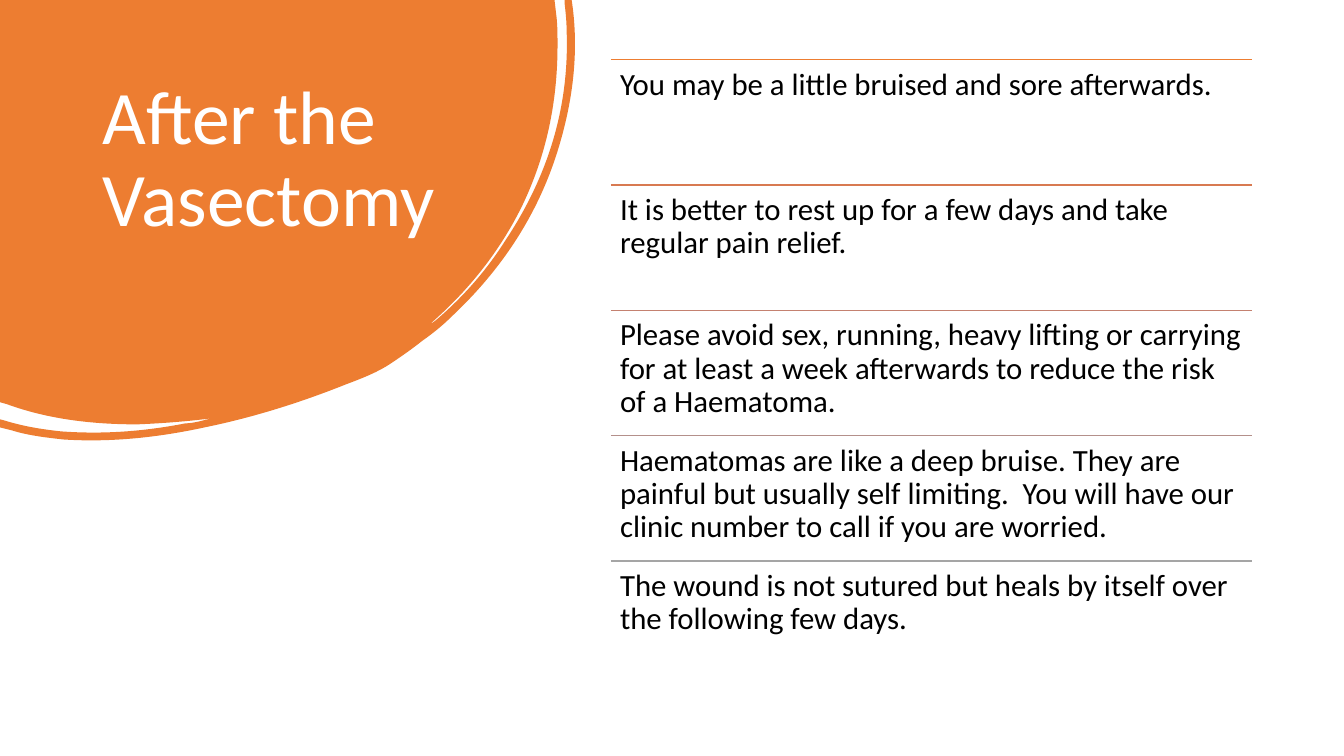
from pptx import Presentation, util as u
from pptx.dml.color import RGBColor
from pptx.enum import shapes, text
from pptx.oxml.ns import qn
from lxml import etree

BLOB = [
    (0, 0), (5.5, 0), (5.52, 0.17),
    (5.53, 0.26, 5.53, 0.36, 5.53, 0.45),
    (5.53, 1.01, 5.42, 1.54, 5.18, 2.04),
    (4.96, 2.49, 4.65, 2.88, 4.27, 3.21),
    (4.29, 3.21, 4.3, 3.19, 4.32, 3.18),
    (4.59, 2.95, 4.82, 2.69, 5.01, 2.39),
    (5.43, 1.76, 5.65, 1.07, 5.62, 0.3),
    (5.62, 0.21, 5.61, 0.12, 5.6, 0.03),
    (5.6, 0), (5.67, 0), (5.68, 0.07),
    (5.74, 0.54, 5.68, 1.02, 5.53, 1.5),
    (5.33, 2.14, 4.97, 2.68, 4.48, 3.14),
    (4.39, 3.23, 4.29, 3.31, 4.19, 3.38),
    (4.09, 3.46, 3.99, 3.53, 3.87, 3.61),
    (3.75, 3.69, 3.6, 3.75, 3.44, 3.81),
    (2.99, 3.99, 2.52, 4.14, 2.03, 4.24),
    (1.57, 4.34, 1.1, 4.39, 0.63, 4.36),
    (0.45, 4.34, 0.28, 4.32, 0.12, 4.27),
    (0, 4.24), (0, 4.16), (0.04, 4.17),
    (0.23, 4.23, 0.42, 4.26, 0.61, 4.28),
    (1.03, 4.31, 1.43, 4.28, 1.84, 4.2),
    (1.89, 4.2, 1.93, 4.19, 1.98, 4.18),
    (2.02, 4.17, 2.06, 4.16, 2.1, 4.15),
    (1.86, 4.18, 1.61, 4.2, 1.36, 4.21),
    (0.92, 4.21, 0.48, 4.16, 0.07, 4.01),
    (0, 3.99),
]
NOTES = [
    ("You may be a little bruised and sore afterwards.", "ED7D31"),
    ("It is better to rest up for a few days and take regular pain relief.", "D87A51"),
    ("Please avoid sex, running, heavy lifting or carrying for at least a week "
     "afterwards to reduce the risk of a Haematoma.", "C48170"),
    ("Haematomas are like a deep bruise. They are painful but usually self limiting.  "
     "You will have our clinic number to call if you are worried.", "B4908B"),
    ("The wound is not sutured but heals by itself over the following few days.", "A5A5A5"),
]


def paint(color, tone):
    """Give a colour format the hex colour."""
    color.rgb = RGBColor.from_string(tone)


def write(frame, words, size, tone):
    """Fill a text frame with one left-aligned paragraph."""
    frame.text = words
    frame.word_wrap = True
    frame.auto_size = text.MSO_AUTO_SIZE.NONE
    frame.vertical_anchor = text.MSO_ANCHOR.TOP
    para = frame.paragraphs[0]
    para.alignment = text.PP_ALIGN.LEFT
    para.line_spacing = 0.9
    font = para.runs[0].font
    font.name, font.size = "Calibri", u.Pt(size)
    paint(font.color, tone)


def bend(shape, parts):
    """Join the three segments of each curved part into one Bezier."""
    lines = iter(list(shape._element.iter(qn("a:lnTo"))))
    for part in parts:
        first = next(lines)
        if len(part) == 2:
            continue
        curve = etree.Element(qn("a:cubicBezTo"))
        first.addprevious(curve)
        for line in (first, next(lines), next(lines)):
            curve.append(line[0])
            line.getparent().remove(line)


def draw_blob(slide, left, top):
    """Draw the orange blob behind everything else."""
    points = [(u.Inches(left + x), u.Inches(top + y))
              for part in BLOB for x, y in zip(part[::2], part[1::2])]
    pen = slide.shapes.build_freeform(*points[0])
    pen.add_line_segments(points[1:], close=True)
    blob = pen.convert_to_shape()
    bend(blob, BLOB[1:])
    blob.shadow.inherit = False
    blob.fill.solid()
    paint(blob.fill.fore_color, "ED7D31")
    blob.line.fill.background()
    slide.shapes.title._element.addprevious(blob._element)


def set_title(slide, left, top, width, height):
    """Place the title in its box."""
    title = slide.shapes.title
    title.left, title.top = u.Inches(left), u.Inches(top)
    title.width, title.height = u.Inches(width), u.Inches(height)
    write(title.text_frame, "After the Vasectomy", 54, "FFFFFF")


def list_notes(slide, left, top, width, height):
    """Stack the ruled notes evenly in the box."""
    group = slide.shapes.add_group_shape().shapes
    row = height / len(NOTES)
    x, wide = u.Inches(left), u.Inches(width)
    for i, (words, tone) in enumerate(NOTES):
        y = u.Inches(top + i * row)
        rule = group.add_connector(shapes.MSO_CONNECTOR.STRAIGHT, x, y, x + wide, y)
        paint(rule.line.color, tone)
        rule.line.width = u.Pt(1)
        etree.SubElement(rule._element.spPr, qn("a:effectLst"))
        frame = group.add_textbox(x, y, wide, u.Inches(row)).text_frame
        frame.margin_left = frame.margin_right = u.Inches(0.09)
        frame.margin_top = frame.margin_bottom = u.Inches(0.09)
        write(frame, words, 22, "000000")


def main():
    """Build and save the slide."""
    deck = Presentation()
    deck.slide_width, deck.slide_height = u.Inches(13.33), u.Inches(7.5)
    slide = deck.slides.add_slide(deck.slide_layouts[5])
    draw_blob(slide, 0, 0)
    set_title(slide, 0.92, 0.74, 3.52, 2.22)
    list_notes(slide, 6.06, 0.59, 6.36, 6.22)
    deck.save("out.pptx")


if __name__ == "__main__":
    main()
